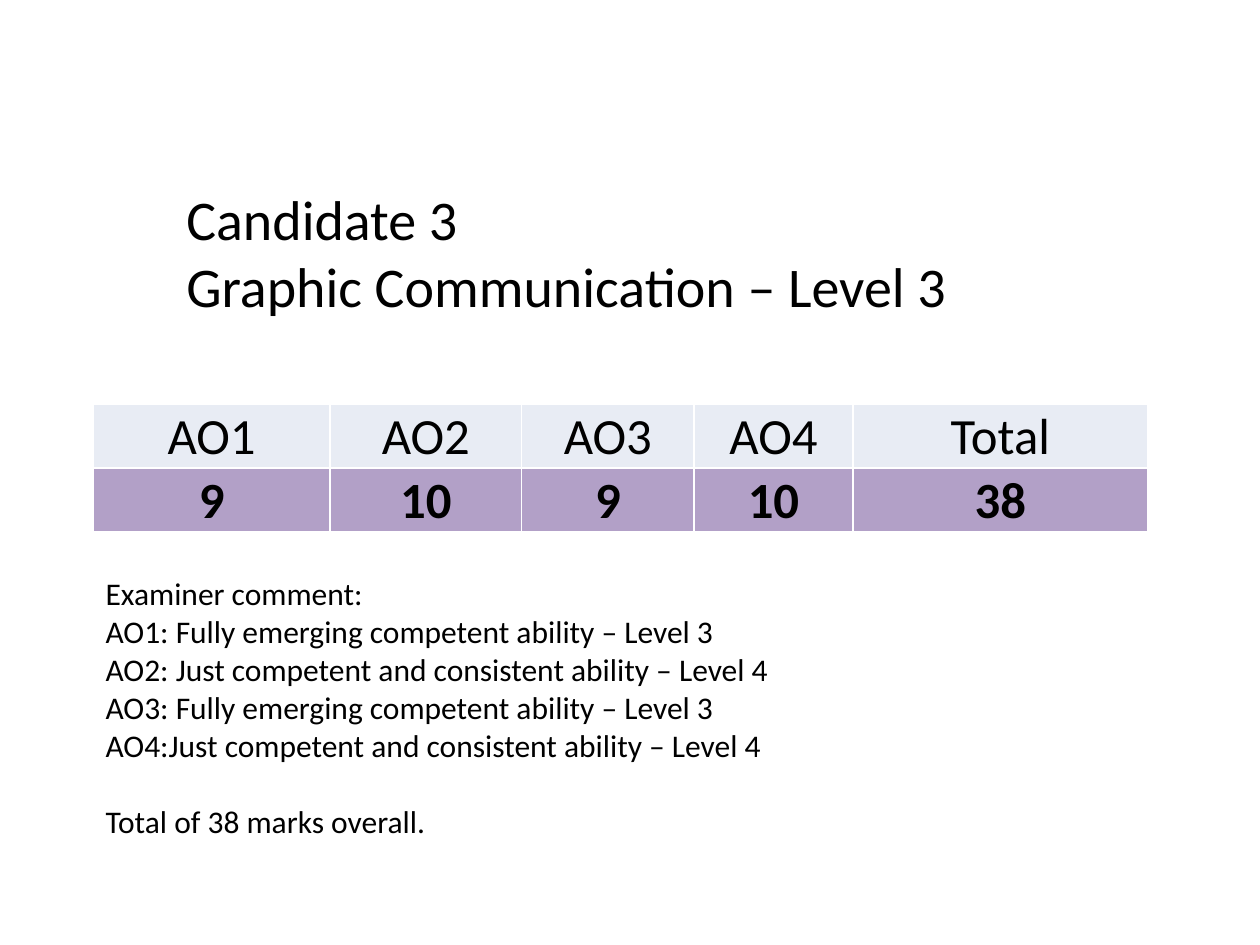
from pptx import Presentation
from pptx.dml.color import RGBColor
from pptx.enum.text import MSO_ANCHOR as Anchor, PP_ALIGN as Align
from pptx.util import Inches, Pt

WIDE, HIGH = Inches(10), Inches(7.5)
BLACK = RGBColor(0x00, 0x00, 0x00)
PALE = RGBColor(0xE8, 0xEC, 0xF4)
PURPLE = RGBColor(0xB2, 0xA0, 0xC7)

TITLE = ["Candidate 3", "Graphic Communication – Level 3"]
HEADS = ["AO1", "AO2", "AO3", "AO4", "Total"]
MARKS = ["9", "10", "9", "10", "38"]
NOTES = [
    "Examiner comment:",
    "AO1: Fully emerging competent ability – Level 3",
    "AO2: Just competent and consistent ability – Level 4",
    "AO3: Fully emerging competent ability – Level 3",
    "AO4:Just competent and consistent ability – Level 4",
    "Total of 38 marks overall.",
]
COLS = [18.8, 15.2, 13.7, 12.6, 23.4]
ROW = 6.75


def across(share):
    return round(WIDE * share / 100)


def down(share):
    return round(HIGH * share / 100)


def place(left, top, width, height):
    return across(left), down(top), across(width), down(height)


def apply(item, values):
    for name, value in values.items():
        setattr(item, name, value)


def style(para, size, bold=False):
    apply(para.font, {"name": "Calibri", "size": Pt(size), "bold": bold})
    para.font.color.rgb = BLACK


def add_text(slide, spot, lines, size, anchor):
    frame = slide.shapes.add_textbox(*place(*spot)).text_frame
    apply(frame, {"word_wrap": True, "vertical_anchor": anchor,
                  "text": "\n".join(lines)})
    for para in frame.paragraphs:
        style(para, size)
    return frame


def fill_cell(cell, text, fill, bold):
    edge = across(0.1)
    apply(cell, {"text": text, "vertical_anchor": Anchor.BOTTOM,
                 "margin_left": edge, "margin_right": edge,
                 "margin_top": edge, "margin_bottom": 0})
    cell.fill.solid()
    cell.fill.fore_color.rgb = fill
    para = cell.text_frame.paragraphs[0]
    para.alignment = Align.CENTER
    style(para, 29, bold)


def add_marks(slide, left, top):
    rows = [(HEADS, PALE, False), (MARKS, PURPLE, True)]
    spot = place(left, top, sum(COLS), ROW * len(rows))
    table = slide.shapes.add_table(len(rows), len(COLS), *spot).table
    apply(table, {"first_row": False, "horz_banding": False})
    for col, share in zip(table.columns, COLS):
        col.width = across(share)
    for row, (texts, fill, bold) in zip(table.rows, rows):
        row.height = down(ROW)
        for cell, text in zip(row.cells, texts):
            fill_cell(cell, text, fill, bold)


def main():
    deck = Presentation()
    apply(deck, {"slide_width": WIDE, "slide_height": HIGH})
    slide = deck.slides.add_slide(deck.slide_layouts[6])
    add_text(slide, (13.8, 16.93, 86.2, 19.33), TITLE, 32, Anchor.MIDDLE)
    add_marks(slide, 7.4, 42.8)
    notes = add_text(slide, (7.4, 60.13, 83.7, 29.6), NOTES, 18, Anchor.TOP)
    notes.paragraphs[-1].space_before = Pt(22)
    deck.save("out.pptx")


if __name__ == "__main__":
    main()
